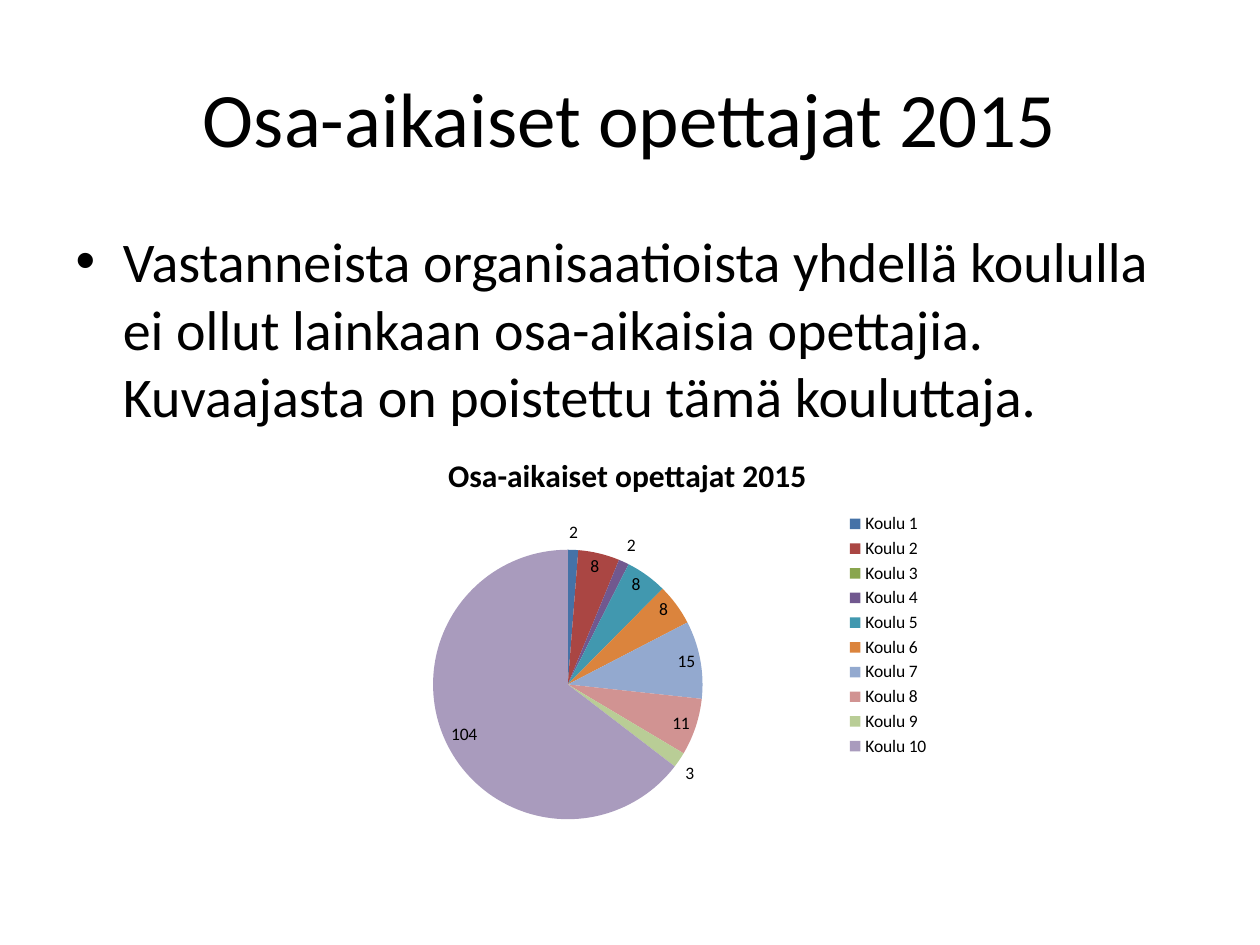
from typing import NamedTuple

from lxml import etree
from pptx import Presentation
from pptx import util as u
from pptx.chart.data import CategoryChartData
from pptx.dml.color import RGBColor
from pptx.enum import chart as charts, text
from pptx.oxml import parse_xml
from pptx.oxml.ns import nsdecls

FONT = "Calibri"
BLACK = "000000"
HEADING = "Osa-aikaiset opettajat 2015"
BODY = ("Vastanneista organisaatioista yhdellä koululla ei ollut lainkaan "
        "osa-aikaisia opettajia. Kuvaajasta on poistettu tämä kouluttaja.")


class Slice(NamedTuple):
    teachers: int
    color: str


SLICES = [
    Slice(2, "4572A7"), Slice(8, "AA4643"), Slice(0, "89A54E"),
    Slice(2, "71588F"), Slice(8, "4198AF"), Slice(8, "DB843D"),
    Slice(15, "93A9CF"), Slice(11, "D19392"), Slice(3, "B9CD96"),
    Slice(104, "A99BBD"),
]


def rgb(color: str) -> RGBColor:
    return RGBColor.from_string(color)


def style_font(font, size: float, bold: bool = False) -> None:
    font.name = FONT
    font.size = u.Pt(size)
    font.bold = bold
    font.color.rgb = rgb(BLACK)


def fill_placeholder(box, words: str, size: float, *place: float) -> None:
    box.left, box.top, box.width, box.height = map(u.Inches, place)
    box.text_frame.text = words
    style_font(box.text_frame.paragraphs[0].runs[0].font, size)


def hide_label(labels, index: int) -> None:
    label = parse_xml(f'<c:dLbl {nsdecls("c")}><c:idx val="{index}"/>'
                      '<c:delete val="1"/></c:dLbl>')
    labels._element.insert(0, label)


def add_pie(slide, slices: list[Slice]) -> None:
    data = CategoryChartData()
    data.categories = [f"Koulu {n}" for n in range(1, len(slices) + 1)]
    data.add_series(HEADING, [item.teachers for item in slices])
    chart = slide.shapes.add_chart(
        charts.XL_CHART_TYPE.PIE, u.Inches(2.48), u.Inches(3.44),
        u.Inches(5), u.Inches(3.2), data).chart
    style_font(chart.font, 10)

    chart.has_title = True
    title = chart.chart_title.text_frame
    title.text = HEADING
    style_font(title.paragraphs[0].runs[0].font, 18, bold=True)

    chart.has_legend = True
    chart.legend.position = charts.XL_LEGEND_POSITION.RIGHT
    chart.legend.include_in_layout = False
    style_font(chart.legend.font, 10)

    plot = chart.plots[0]
    plot.vary_by_categories = True
    series = plot.series[0]
    labels = series.data_labels
    labels.show_value = True
    labels.position = charts.XL_LABEL_POSITION.BEST_FIT
    style_font(labels.font, 10)
    for index, item in enumerate(slices):
        fill = series.points[index].format.fill
        fill.solid()
        fill.fore_color.rgb = rgb(item.color)
        if not item.teachers:
            hide_label(labels, index)


def main() -> None:
    deck = Presentation()
    deck.slide_width, deck.slide_height = u.Inches(10), u.Inches(7.5)
    slide = deck.slides.add_slide(deck.slide_layouts[1])

    title, body = slide.placeholders
    fill_placeholder(title, HEADING, 44, 0.5, 0.3, 9, 1.25)
    title.text_frame.vertical_anchor = text.MSO_ANCHOR.MIDDLE
    title.text_frame.paragraphs[0].alignment = text.PP_ALIGN.CENTER
    fill_placeholder(body, BODY, 32, 0.5, 1.75, 9, 4.95)

    add_pie(slide, SLICES)
    deck.save("out.pptx")


if __name__ == "__main__":
    main()
